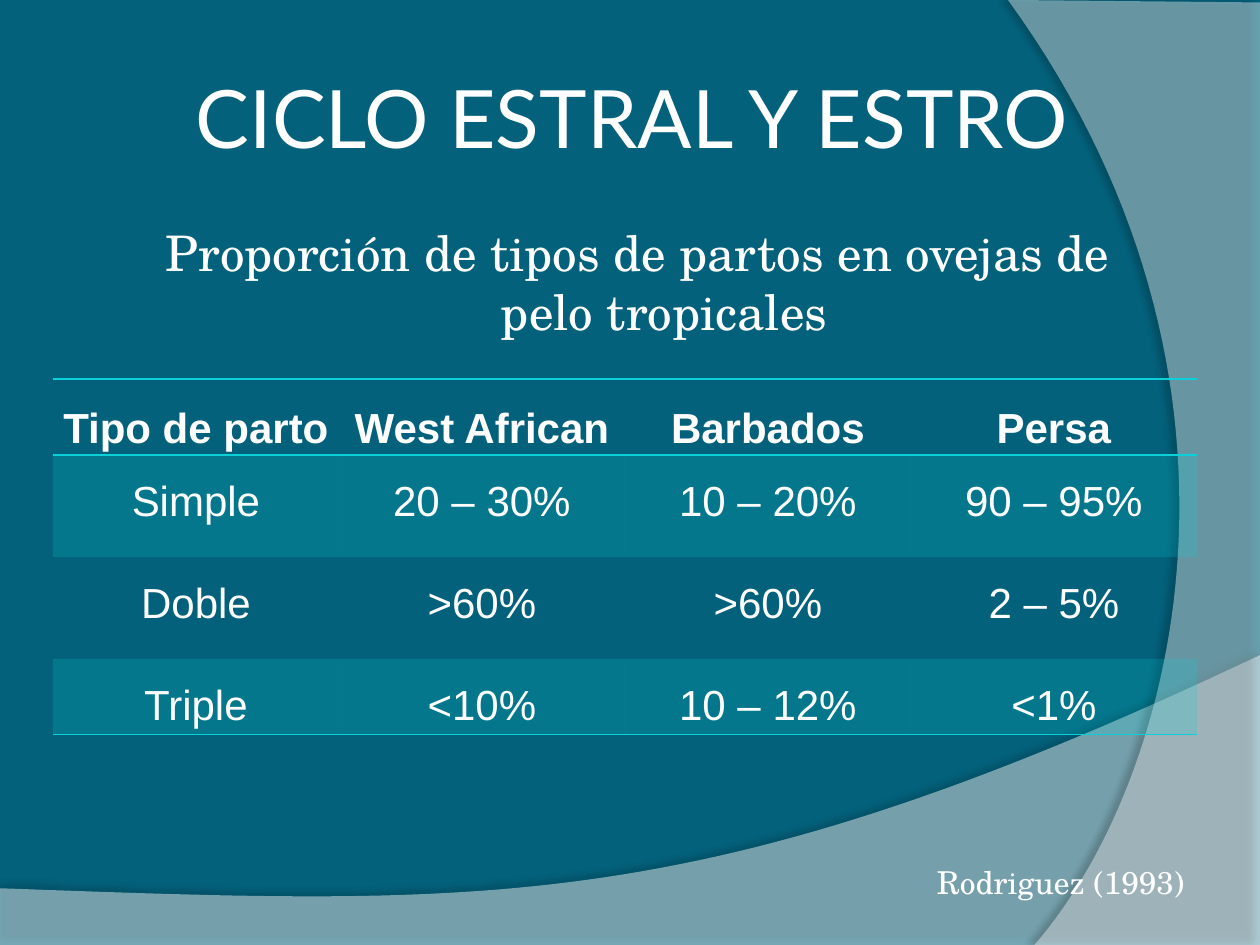
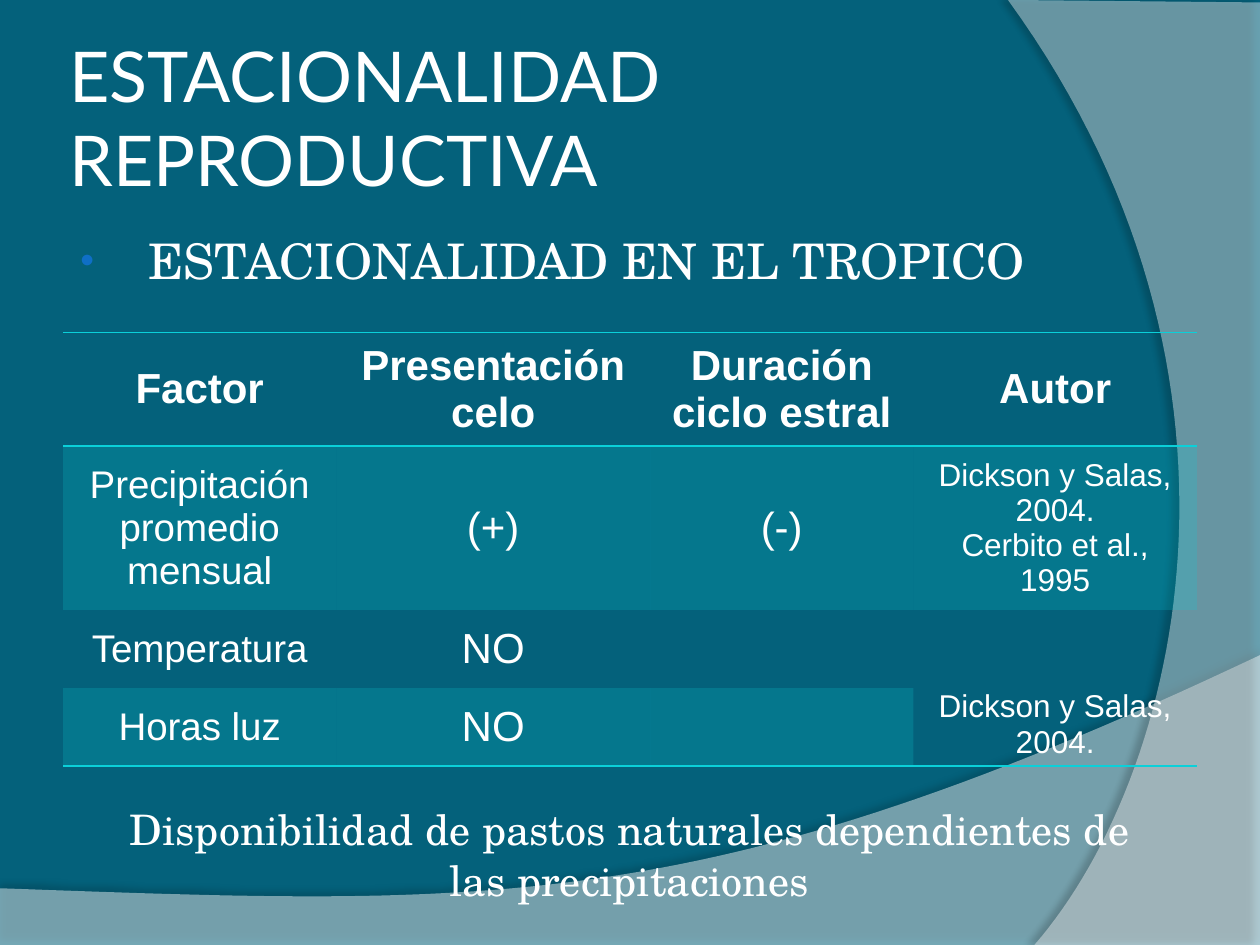
from dataclasses import dataclass

from lxml.etree import SubElement
from pptx import Presentation
from pptx.dml.color import RGBColor
from pptx.enum.text import MSO_ANCHOR, PP_ALIGN
from pptx.oxml.ns import qn
from pptx.util import Inches, Pt

COLORS = {
    "background": "04617B",
    "text": "FFFFFF",
    "accent": "0BD0D9",
    "bullet": "0F6FC6",
    "shadow": "000000",
}
TITLE_FONT, BODY_FONT, TABLE_FONT = "Lato", "TeX Gyre Schola", "Arial"
PLAIN_TABLE_STYLE = "{2D5ABB26-0587-4C30-8999-92F81FD0307C}"
CURVE_STEPS = 60
BAND_OPACITY = 20


@dataclass(frozen=True)
class Curve:
    """Cubic curve through two control points to an end point."""
    first: tuple
    second: tuple
    end: tuple


@dataclass(frozen=True)
class Sweep:
    """Translucent background shape with a shadow."""
    start: tuple
    corners: tuple
    curve: Curve
    opacity: int
    shadow_opacity: int
    shadow_distance: float
    shadow_angle: int


@dataclass(frozen=True)
class Cell:
    text: str = ""
    size: float = 24
    bold: bool = False
    anchor: MSO_ANCHOR = MSO_ANCHOR.MIDDLE


@dataclass(frozen=True)
class TableLayout:
    left: float
    top: float
    columns: tuple
    rows: tuple
    line_spacing: float = 1.0
    side_margin: float = 0.1
    end_margin: float = 0.05


SWEEPS = (
    Sweep((0, 7.05), ((0, 7.5), (10, 7.5), (10, 5.2)),
          Curve((5.59, 7.29), (3.91, 7.19), (0, 7.05)), 45, 35, 3.5, 270),
    Sweep((10, 0.02), ((10, 7.5), (8.21, 7.5)),
          Curve((9.35, 6.19), (10.18, 3), (8, 0)), 40, 45, 4, 180),
)


def curve_points(start: tuple, curve: Curve) -> list:
    points = []
    for step in range(1, CURVE_STEPS + 1):
        t = step / CURVE_STEPS
        u = 1 - t
        points.append(tuple(
            u**3 * a + 3 * u * u * t * b + 3 * u * t * t * c + t**3 * d
            for a, b, c, d in zip(start, curve.first, curve.second, curve.end)
        ))
    return points


def set_fill(fill, color: str, opacity: int) -> None:
    fill.solid()
    fill.fore_color.rgb = RGBColor.from_string(COLORS[color])
    rgb = fill._xPr.find(".//" + qn("a:srgbClr"))
    SubElement(rgb, qn("a:alpha"), val=str(opacity * 1000))


def add_sweep(page, sweep: Sweep) -> None:
    points = [*sweep.corners, *curve_points(sweep.corners[-1], sweep.curve)]
    builder = page.shapes.build_freeform(*map(Inches, sweep.start))
    builder.add_line_segments([(Inches(x), Inches(y)) for x, y in points])
    shape = builder.convert_to_shape()
    set_fill(shape.fill, "text", sweep.opacity)
    shape.line.fill.background()
    shape.shadow.inherit = False
    effects = shape._element.spPr.find(qn("a:effectLst"))
    shadow = SubElement(
        effects, qn("a:outerShdw"), blurRad=str(Pt(4)),
        dist=str(Pt(sweep.shadow_distance)), dir=str(sweep.shadow_angle * 60000),
        algn="ctr", rotWithShape="0")
    rgb = SubElement(shadow, qn("a:srgbClr"), val=COLORS["shadow"])
    SubElement(rgb, qn("a:alpha"), val=str(sweep.shadow_opacity * 1000))


def write_span(para, text: str, size: float, font: str, bold: bool = False) -> None:
    span = para.add_run()
    span.text = text
    span.font.size = Pt(size)
    span.font.name = font
    span.font.bold = bold
    span.font.color.rgb = RGBColor.from_string(COLORS["text"])


def add_text(page, text: str, left: float, top: float, width: float, height: float, *,
             size: float, font: str = BODY_FONT, align: PP_ALIGN = PP_ALIGN.LEFT,
             anchor: MSO_ANCHOR = MSO_ANCHOR.TOP, side_margin: float = 0.1,
             indent: float = 0, hanging: float = 0, bullet: bool = False) -> None:
    box = page.shapes.add_textbox(*map(Inches, (left, top, width, height)))
    frame = box.text_frame
    frame.word_wrap = True
    frame.vertical_anchor = anchor
    frame.margin_left = frame.margin_right = Inches(side_margin)
    para = frame.paragraphs[0]
    para.alignment = align
    properties = para._p.get_or_add_pPr()
    properties.set("marL", str(Inches(indent)))
    properties.set("indent", str(-Inches(hanging)))
    if bullet:
        color = SubElement(properties, qn("a:buClr"))
        SubElement(color, qn("a:srgbClr"), val=COLORS["bullet"])
        SubElement(properties, qn("a:buSzPct"), val="80000")
        SubElement(properties, qn("a:buFont"), typeface=TABLE_FONT)
        SubElement(properties, qn("a:buChar"), char="•")
    write_span(para, text, size, font)


def add_title(page, text: str, left: float, size: float, align: PP_ALIGN) -> None:
    add_text(page, text, left, 0.3, 8.17, 1.25, size=size, font=TITLE_FONT,
             align=align, anchor=MSO_ANCHOR.MIDDLE, side_margin=0.05)


def add_borders(cell, sides: list) -> None:
    """Draw accent lines on the given sides, listed as T before B."""
    properties = cell._tc.get_or_add_tcPr()
    for position, side in enumerate(sides):
        line = SubElement(properties, qn(f"a:ln{side}"), w=str(Pt(1)))
        fill = SubElement(line, qn("a:solidFill"))
        SubElement(fill, qn("a:srgbClr"), val=COLORS["accent"])
        properties.insert(position, line)


def fill_cell(cell, content: Cell, layout: TableLayout) -> None:
    cell.margin_left = cell.margin_right = Inches(layout.side_margin)
    cell.margin_top = cell.margin_bottom = Inches(layout.end_margin)
    cell.vertical_anchor = content.anchor
    frame = cell.text_frame
    for number, text in enumerate(content.text.split("\n")):
        para = frame.add_paragraph() if number else frame.paragraphs[0]
        para.alignment = PP_ALIGN.CENTER
        para.line_spacing = layout.line_spacing
        if text:
            write_span(para, text, content.size, TABLE_FONT, content.bold)


def add_data_table(page, layout: TableLayout, contents: list):
    """Draw a table with accent rules and every other body row tinted."""
    frame = page.shapes.add_table(
        len(layout.rows), len(layout.columns), Inches(layout.left), Inches(layout.top),
        Inches(sum(layout.columns)), Inches(sum(layout.rows)))
    table = frame.table
    table.first_row = table.horz_banding = False
    table._tbl.tblPr.find(qn("a:tableStyleId")).text = PLAIN_TABLE_STYLE
    for column, width in zip(table.columns, layout.columns):
        column.width = Inches(width)
    for row, height in zip(table.rows, layout.rows):
        row.height = Inches(height)
    last = len(layout.rows) - 1
    for row_number, row in enumerate(contents):
        sides = {0: ["T", "B"], last: ["B"]}.get(row_number, [])
        for column_number, content in enumerate(row):
            cell = table.cell(row_number, column_number)
            fill_cell(cell, content, layout)
            if row_number % 2:
                set_fill(cell.fill, "accent", BAND_OPACITY)
            else:
                cell.fill.background()
            add_borders(cell, sides)
    return table


def header_row(*labels: str) -> list:
    return [Cell(label, bold=True) for label in labels]


def add_page(deck):
    page = deck.slides.add_slide(deck.slide_layouts[6])
    page.background.fill.solid()
    page.background.fill.fore_color.rgb = RGBColor.from_string(COLORS["background"])
    for sweep in SWEEPS:
        add_sweep(page, sweep)
    return page


def build_birth_types(deck) -> None:
    page = add_page(deck)
    add_title(page, "CICLO ESTRAL Y ESTRO", 0.93, 46, PP_ALIGN.CENTER)
    add_text(page, "Rodriguez (1993)", 0.5, 6.8, 9, 0.4, size=18, align=PP_ALIGN.RIGHT)
    add_text(page, "Proporción de tipos de partos en ovejas de pelo tropicales",
             0.78, 1.72, 8.52, 1.1, size=28, align=PP_ALIGN.CENTER,
             indent=0.46, hanging=0.42)
    births = [
        ("Simple", "20 – 30%", "10 – 20%", "90 – 95%"),
        ("Doble", ">60%", ">60%", "2 – 5%"),
        ("Triple", "<10%", "10 – 12%", "<1%"),
    ]
    rows = [[Cell(text, anchor=MSO_ANCHOR.TOP) for text in row] for row in births]
    layout = TableLayout(0.42, 3.01, (2.27,) * 4, (0.58, 0.81, 0.81, 0.58),
                         line_spacing=1.5, side_margin=0.07, end_margin=0)
    add_data_table(page, layout,
                   [header_row("Tipo de parto", "West African", "Barbados", "Persa"), *rows])


def build_seasonality(deck) -> None:
    page = add_page(deck)
    add_title(page, "ESTACIONALIDAD REPRODUCTIVA", 0.5, 40, PP_ALIGN.LEFT)
    add_text(page, "Disponibilidad de pastos naturales dependientes de las precipitaciones",
             0.83, 6.33, 8.33, 0.91, size=24, align=PP_ALIGN.CENTER)
    add_text(page, "ESTACIONALIDAD EN EL TROPICO", 0.5, 1.78, 8.17, 0.6, size=28,
             indent=0.58, hanging=0.54, bullet=True)
    layout = TableLayout(0.5, 2.64, (2.17, 2.49, 2.09, 2.25), (0.88, 1.27, 0.62, 0.62))
    table = add_data_table(page, layout, [
        header_row("Factor", "Presentación celo", "Duración ciclo estral", "Autor"),
        [Cell("Precipitación promedio mensual", 22), Cell("(+)"), Cell("(-)"),
         Cell("Dickson y Salas, 2004.\nCerbito et al., 1995", 18)],
        [Cell("Temperatura", 22), Cell("NO"), Cell(),
         Cell("Dickson y Salas, 2004.", 18, anchor=MSO_ANCHOR.BOTTOM)],
        [Cell("Horas luz", 22), Cell("NO"), Cell(), Cell()],
    ])
    author = table.cell(2, 3)
    author.merge(table.cell(3, 3))
    add_borders(author, ["B"])


def main() -> None:
    deck = Presentation()
    deck.slide_width, deck.slide_height = Inches(10), Inches(7.5)
    build_birth_types(deck)
    build_seasonality(deck)
    deck.save("out.pptx")


if __name__ == "__main__":
    main()
